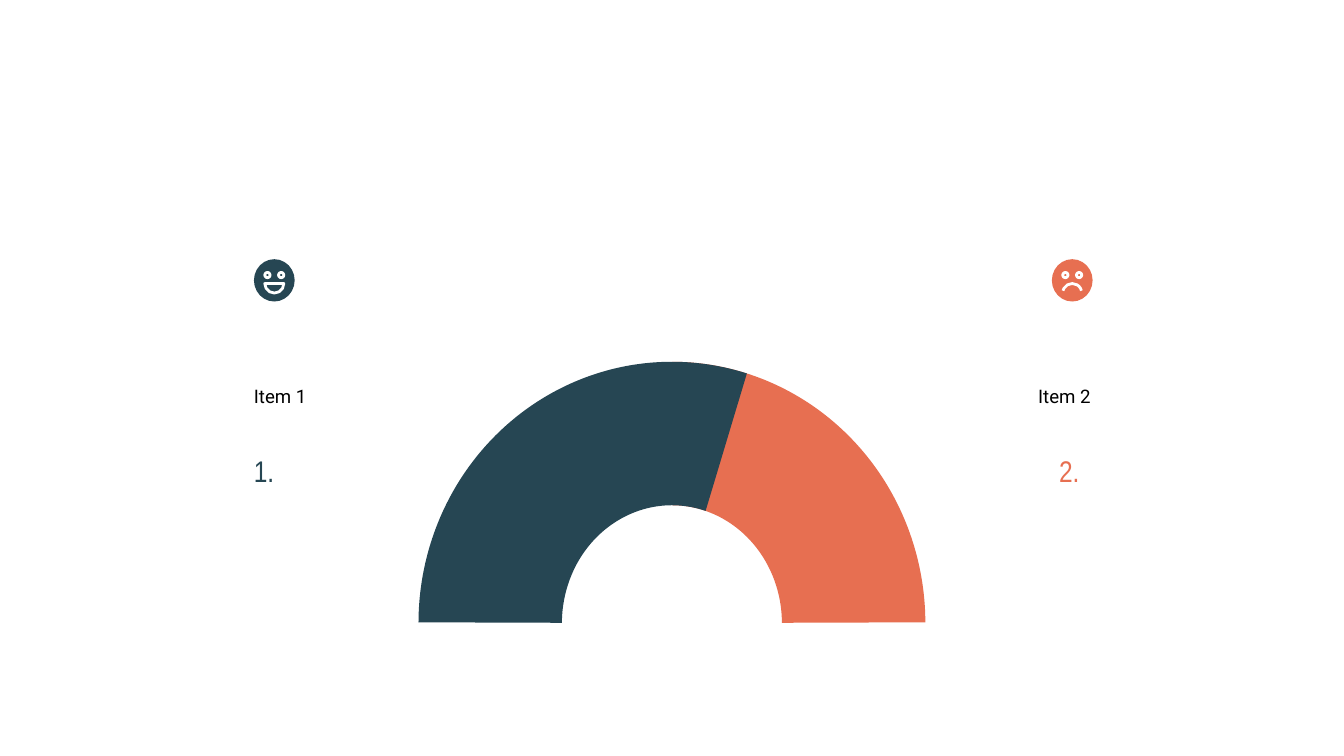
from pptx import Presentation
from pptx.dml.color import RGBColor
from pptx.enum.shapes import MSO_SHAPE
from pptx.enum.text import MSO_ANCHOR, PP_ALIGN
from pptx.util import Cm, Pt

NAVY = RGBColor(0x26, 0x46, 0x53)
CORAL = RGBColor(0xE7, 0x6F, 0x51)
WHITE = RGBColor(0xFF, 0xFF, 0xFF)
BLACK = RGBColor(0x00, 0x00, 0x00)
OVAL, ARC, CHORD = MSO_SHAPE.OVAL, MSO_SHAPE.ARC, MSO_SHAPE.CHORD
BLOCK_ARC = MSO_SHAPE.BLOCK_ARC
MIDDLE = MSO_ANCHOR.MIDDLE
LEFT, RIGHT = PP_ALIGN.LEFT, PP_ALIGN.RIGHT
ANGLE_UNIT = 0.6
FACE_WIDTH, FACE_HEIGHT = 0.77, 0.8
SMILE = (CHORD, 0, 180, 0.06)
FROWN = (ARC, 194, 346, 0.24)


def add_figure(slide, kind, box, fill=None, line=None):
    """Add a flat preset shape in a box of centimetres."""
    shape = slide.shapes.add_shape(kind, *map(Cm, box))
    shape.shadow.inherit = False
    if fill is None:
        shape.fill.background()
    else:
        shape.fill.solid()
        shape.fill.fore_color.rgb = fill
    if line is None:
        shape.line.fill.background()
    else:
        shape.line.color.rgb = line
        shape.line.width = Pt(1.5)
    return shape


def set_angles(shape, start, end):
    """Set the start and end angles of an arc in degrees."""
    shape.adjustments[0] = start * ANGLE_UNIT
    shape.adjustments[1] = end * ANGLE_UNIT


def add_text(slide, box, text, font_name, size, color, alignment):
    """Add a one-line text box, centred vertically."""
    frame = slide.shapes.add_textbox(*map(Cm, box)).text_frame
    frame.word_wrap = True
    frame.vertical_anchor = MIDDLE
    frame.margin_left = frame.margin_right = Cm(0.25)
    frame.margin_top = frame.margin_bottom = Cm(0.25)
    paragraph = frame.paragraphs[0]
    paragraph.text = text
    paragraph.alignment = alignment
    paragraph.font.name = font_name
    paragraph.font.size = Pt(size)
    paragraph.font.color.rgb = color


def add_face(slide, left, top, color, mouth):
    """Draw a round face with two ringed eyes and the given mouth."""
    center_x, center_y = left + FACE_WIDTH / 2, top + FACE_HEIGHT / 2
    add_figure(slide, OVAL, (left, top, FACE_WIDTH, FACE_HEIGHT), color)
    for offset in (-0.13, 0.13):
        eye = (center_x + offset - 0.05, center_y - 0.15, 0.1, 0.1)
        add_figure(slide, OVAL, eye, color, WHITE)
    kind, start, end, drop = mouth
    radius = 0.18
    box = (center_x - radius, center_y + drop - radius, 2 * radius, 2 * radius)
    set_angles(add_figure(slide, kind, box, line=WHITE), start, end)


def add_gauge(slide, left, top, width, height):
    """Draw the half-ring gauge, its coral part mirrored behind the navy one."""
    for color, end, mirrored in ((CORAL, 269.95, True), (NAVY, 286.7, False)):
        segment = add_figure(slide, BLOCK_ARC, (left, top, width, height), color)
        set_angles(segment, 180.18, end)
        segment.adjustments[2] = 0.283
        if mirrored:
            segment.element.spPr.get_or_add_xfrm().set("flipH", "1")


def add_item(slide, left, right, number, color, alignment):
    """Place an item label and its number against one side of a column."""
    for text, top, width, height, font_name, size, text_color in (
        (f"Item {number}", 6.71, 4.65, 1.57, "Roboto", 10, BLACK),
        (f"{number}.", 8.46, 2.34, 0.86, "Arial Narrow", 16, color),
    ):
        box_left = left if alignment == LEFT else right - width
        if alignment == RIGHT and text_color == color:
            box_left -= 0.21
        box = (box_left, top, width, height)
        add_text(slide, box, text, font_name, size, text_color, alignment)


def main():
    """Build and save the slide."""
    presentation = Presentation()
    presentation.slide_width, presentation.slide_height = Cm(25.4), Cm(14.29)
    slide = presentation.slides.add_slide(presentation.slide_layouts[6])
    add_gauge(slide, 7.91, 6.84, 9.58, 9.88)
    add_face(slide, 4.8, 4.9, NAVY, SMILE)
    add_face(slide, 19.88, 4.9, CORAL, FROWN)
    add_item(slide, 4.55, 9.2, 1, NAVY, LEFT)
    add_item(slide, 16.21, 20.86, 2, CORAL, RIGHT)
    presentation.save("out.pptx")


if __name__ == "__main__":
    main()
